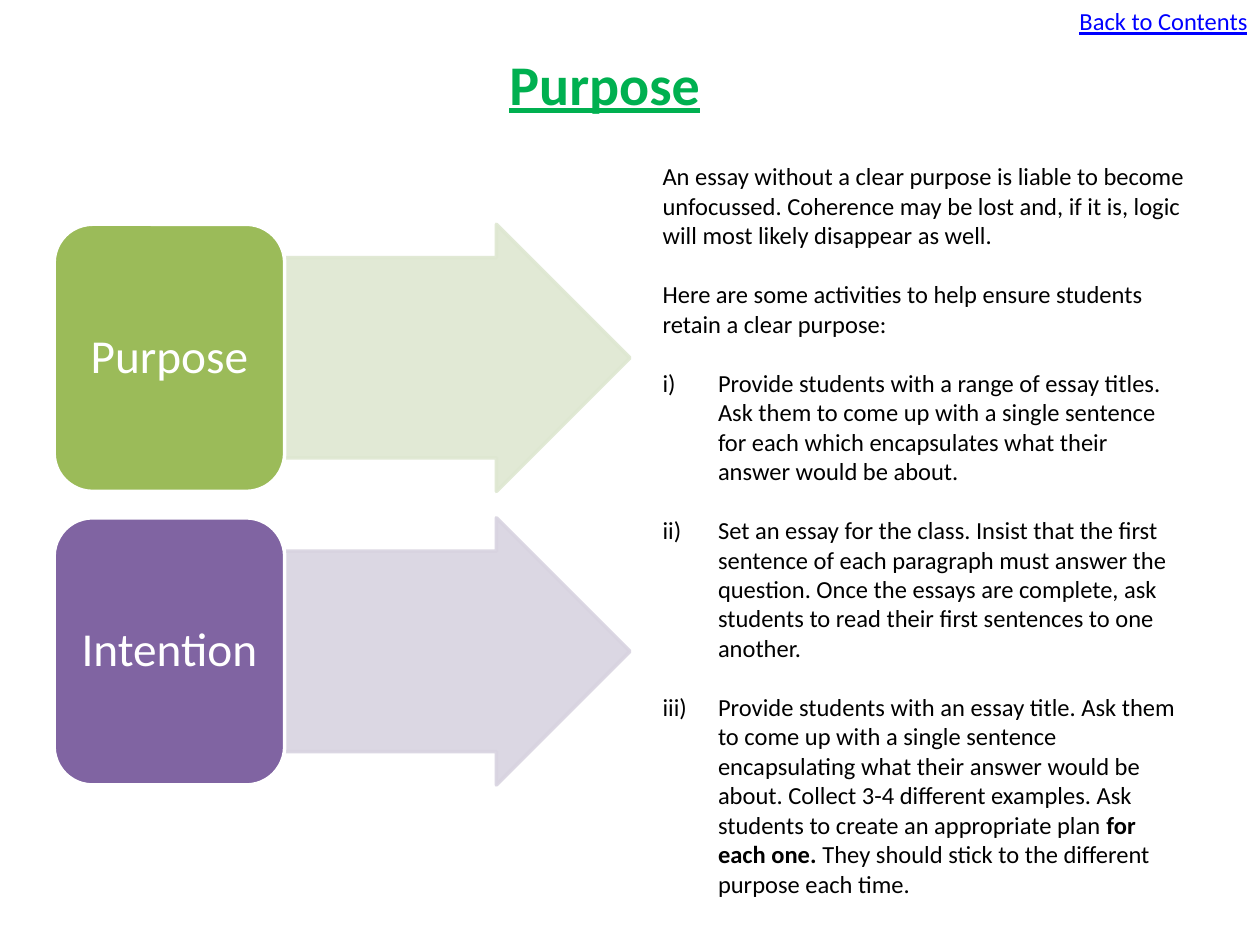
from lxml import etree
from pptx import Presentation
from pptx import util as u
from pptx.dml.color import RGBColor
from pptx.enum import shapes, text
from pptx.oxml import ns

FONT = "Calibri"
HUES = {"link": "0000FF", "title": "00B050", "body": "000000", "white": "FFFFFF"}
LINK = "Back to Contents"
TITLE = "Purpose"
ROWS = [("Purpose", "9BBB59", "DEE7D1"), ("Intention", "8064A2", "D8D3E0")]
INTRO = [
    "An essay without a clear purpose is liable to become unfocussed. Coherence may "
    "be lost and, if it is, logic will most likely disappear as well.",
    "Here are some activities to help ensure students retain a clear purpose:",
]
# Each task is a list of runs; every second run is bold.
TASKS = [
    ["Provide students with a range of essay titles. Ask them to come up with a single "
     "sentence for each which encapsulates what their answer would be about."],
    ["Set an essay for the class. Insist that the first sentence of each paragraph must "
     "answer the question. Once the essays are complete, ask students to read their "
     "first sentences to one another."],
    ["Provide students with an essay title. Ask them to come up with a single sentence "
     "encapsulating what their answer would be about. Collect 3-4 different examples. "
     "Ask students to create an appropriate plan ",
     "for each one.",
     " They should stick to the different purpose each time."],
]

LEFT, TOP = 0.43, 1.78
BOX_W, ARROW_W, ROW_H, PITCH = 1.83, 2.74, 2.12, 2.33
INDENT = 0.44

deck = Presentation()
deck.slide_width, deck.slide_height = u.Inches(10), u.Inches(7.5)
slide = deck.slides.add_slide(deck.slide_layouts[6])


def inches(*nums):
    return [u.Inches(n) for n in nums]


def style(run, size, hue, bold=False, under=False):
    font = run.font
    font.name, font.size = FONT, u.Pt(size)
    font.bold, font.underline = bold, under
    font.color.rgb = RGBColor.from_string(hue)


def add_text(box):
    frame = slide.shapes.add_textbox(*inches(*box)).text_frame
    frame.word_wrap = True
    return frame


def add_line(box, words, align, *look):
    para = add_text(box).paragraphs[0]
    para.text, para.alignment = words, align
    style(para.runs[0], *look)


def add_block(kind, box, fill, line, alpha=100):
    block = slide.shapes.add_shape(kind, *inches(*box))
    block.shadow.inherit = False
    block.fill.solid()
    block.fill.fore_color.rgb = RGBColor.from_string(fill)
    block.line.color.rgb = RGBColor.from_string(line)
    block.line.width = u.Pt(2)
    if alpha < 100:
        for hue in block._element.spPr.iter(ns.qn("a:srgbClr")):
            etree.SubElement(hue, ns.qn("a:alpha"), val=str(alpha * 1000))
    return block


def number(para):
    """Give the paragraph a hanging roman number: i), ii), iii)."""
    props = para._p.get_or_add_pPr()
    props.set("marL", str(u.Inches(INDENT)))
    props.set("indent", str(-u.Inches(INDENT)))
    etree.SubElement(props, ns.qn("a:buFont"), typeface="+mj-lt")
    etree.SubElement(props, ns.qn("a:buAutoNum"), type="romanLcParenR")


add_line((8.39, 0, 1.61, 0.34), LINK, text.PP_ALIGN.RIGHT, 14, HUES["link"], False, True)
add_line((1.22, 0.34, 7.16, 0.64), TITLE, text.PP_ALIGN.CENTER, 32, HUES["title"], True, True)

body = add_text((5.16, 1.23, 4.35, 5.99))
items = [[words] for words in INTRO] + TASKS
for i, parts in enumerate(items):
    para = body.paragraphs[0] if i == 0 else body.add_paragraph()
    if i < len(items) - 1:
        para.space_after = u.Pt(17)
    if i >= len(INTRO):
        number(para)
    for j, words in enumerate(parts):
        run = para.add_run()
        run.text = words
        style(run, 14, HUES["body"], bold=j % 2 == 1)

for i, (label, dark, pale) in enumerate(ROWS):
    top = TOP + i * PITCH
    arrow = add_block(shapes.MSO_SHAPE.RIGHT_ARROW,
                      (LEFT + BOX_W, top, ARROW_W, ROW_H), pale, pale, 90)
    arrow.adjustments[0], arrow.adjustments[1] = 0.75, 0.5
    box = add_block(shapes.MSO_SHAPE.ROUNDED_RECTANGLE,
                    (LEFT, top, BOX_W, ROW_H), dark, HUES["white"])
    frame = box.text_frame
    frame.text = label
    frame.vertical_anchor = text.MSO_ANCHOR.MIDDLE
    frame.margin_left = frame.margin_right = u.Inches(0.11)
    frame.margin_top = frame.margin_bottom = u.Inches(0.06)
    para = frame.paragraphs[0]
    para.alignment, para.line_spacing = text.PP_ALIGN.CENTER, 0.9
    style(para.runs[0], 27, HUES["white"])

deck.save("out.pptx")
